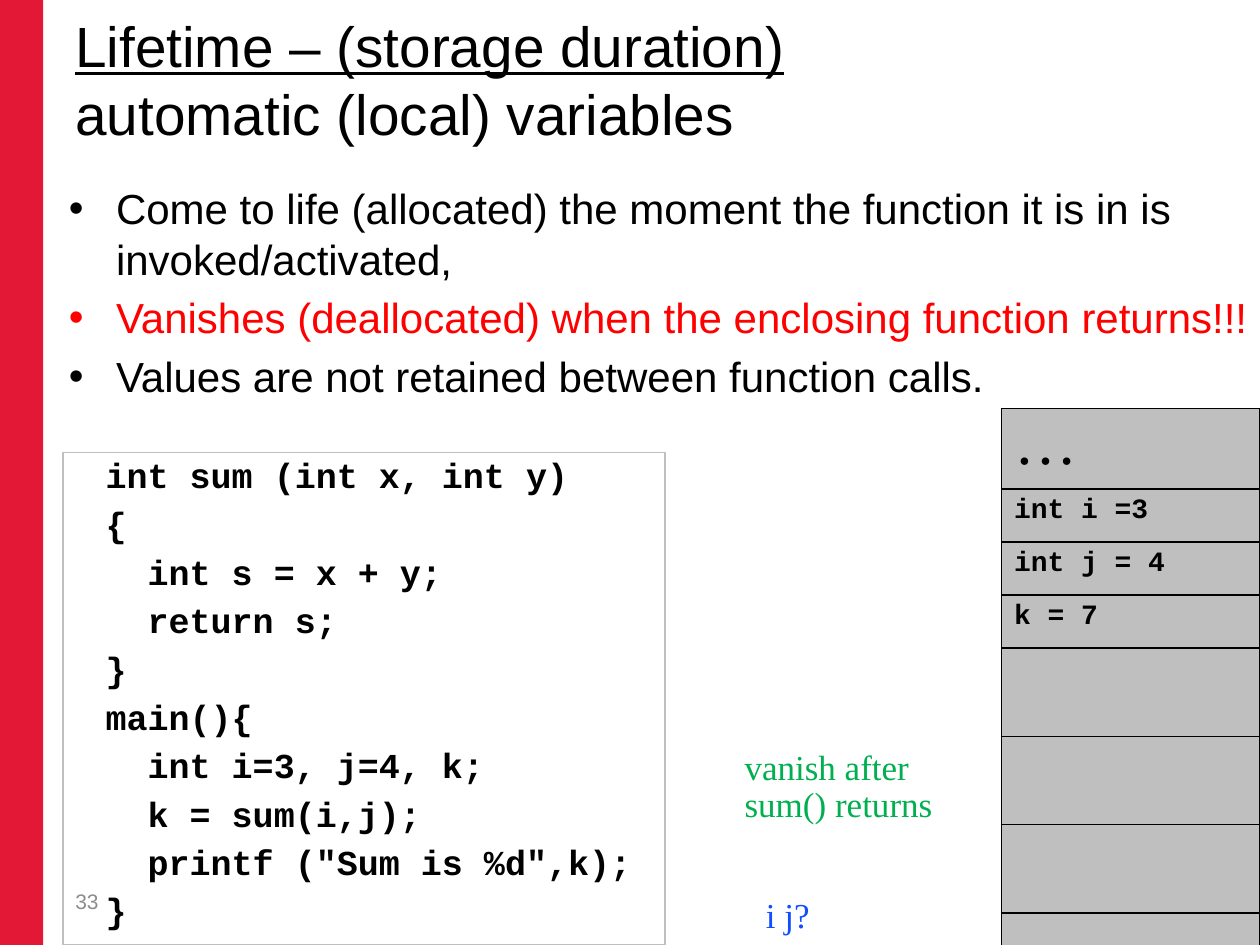
from lxml import etree
from pptx import Presentation
from pptx import util as u
from pptx.dml.color import RGBColor
from pptx.enum import shapes, text
from pptx.oxml.ns import qn

# Content
HUES = {"black": "000000", "red": "FF0000", "band": "E31837", "gray": "8C8C8C",
        "edge": "BFBFBF", "green": "00B050", "blue": "114FFB"}
SANS, MONO, SERIF = "Arial", "Courier New", "Times New Roman"

TITLE = [("Lifetime – (storage duration)", True),
         ("automatic (local) variables", False)]
POINTS = [
    ("Come to life (allocated) the moment the function it is in is invoked/activated,", "black"),
    ("Vanishes (deallocated) when the enclosing function returns!!!", "red"),
    ("Values are not retained between function calls.", "black"),
]
CODE = [
    "int sum (int x, int y)",
    "{",
    "  int s = x + y;",
    "  return s;",
    "}",
    "main(){",
    "  int i=3, j=4, k;",
    "  k = sum(i,j);",
    '  printf ("Sum is %d",k);',
    "}",
]
STACK = ["…", "int i =3", "int j = 4", "k = 7"] + [""] * 6
NOTES = [("vanish after sum() returns", "green", (14.76, 14.99, 5.28, 1.8)),
         ("i j?", "blue", (15.19, 17.98, 5.28, 1.02))]

show = Presentation()
show.slide_width, show.slide_height = u.Cm(25.4), u.Cm(19.05)
slide = show.slides.add_slide(show.slide_layouts[6])


def hue(name):
    return RGBColor.from_string(HUES[name])


def add_run(para, words, face, size, tint, bold=False, line=False):
    run = para.add_run()
    run.text = words
    font = run.font
    font.name, font.size, font.bold, font.underline = face, u.Pt(size), bold, line
    font.color.rgb = hue(tint)


def space(para, before, lines=None):
    """Line spacing as a factor, space before as a percentage."""
    if lines:
        para.line_spacing = lines
    gap = etree.SubElement(para._p.get_or_add_pPr(), qn("a:spcBef"))
    etree.SubElement(gap, qn("a:spcPct"), val=str(before * 1000))


def add_box(place, mid=False):
    frame = slide.shapes.add_textbox(*map(u.Cm, place)).text_frame
    frame.word_wrap = True
    frame.vertical_anchor = text.MSO_ANCHOR.MIDDLE if mid else text.MSO_ANCHOR.TOP
    return frame


def paras(frame, items):
    """Pair each item with a paragraph of the frame."""
    for n, item in enumerate(items):
        yield (frame.add_paragraph() if n else frame.paragraphs[0]), item


def add_rect(place, fill=None, edge=None):
    rect = slide.shapes.add_shape(shapes.MSO_SHAPE.RECTANGLE, *map(u.Cm, place))
    rect.shadow.inherit = False
    if fill:
        rect.fill.solid()
        rect.fill.fore_color.rgb = hue(fill)
    else:
        rect.fill.background()
    if edge:
        rect.line.color.rgb = hue(edge)
        rect.line.width = u.Pt(0.75)
    else:
        rect.line.fill.background()


# Side band and slide number
add_rect((0, 0, 0.87, 19.05), fill="band")
add_run(add_box((1.27, 17.63, 1.27, 1.07), mid=True).paragraphs[0], "33", SANS, 12, "gray")

# Code
for para, row in paras(add_box((1.88, 9.12, 12.7, 10.29)), CODE):
    space(para, 30, 0.9)
    add_run(para, row, MONO, 20, "black", bold=True)

# Memory stack
tall = [1.14] + [1.07] * (len(STACK) - 1)
table = slide.shapes.add_table(len(STACK), 1, u.Cm(20.19), u.Cm(8.23),
                               u.Cm(5.21), u.Cm(sum(tall))).table
table.first_row = table.horz_banding = False
for n, item in enumerate(STACK):
    table.rows[n].height = u.Cm(tall[n])
    cell = table.cell(n, 0)
    props = cell._tc.get_or_add_tcPr()
    for side in ("lnL", "lnR", "lnT", "lnB"):
        edge = etree.SubElement(props, qn("a:" + side), w=str(u.Pt(1)))
        paint = etree.SubElement(edge, qn("a:solidFill"))
        etree.SubElement(paint, qn("a:srgbClr"), val=HUES["black"])
    cell.fill.solid()
    cell.fill.fore_color.rgb = hue("edge")
    para = cell.text_frame.paragraphs[0]
    space(para, 30, 0.9)
    if item == "…":
        add_run(para, item, SERIF, 36, "black")
    elif item:
        add_run(para, item, MONO, 16, "black", bold=True)
    else:
        end = etree.SubElement(para._p, qn("a:endParaRPr"), sz="3600")
        etree.SubElement(end, qn("a:latin"), typeface=SERIF)

# Title
para = add_box((1.27, 0, 22.86, 3.18), mid=True).paragraphs[0]
for n, (words, line) in enumerate(TITLE):
    if n:
        para.add_line_break()
    add_run(para, words, SANS, 32.4, "black", line=line)
for stop in para._p.findall(qn("a:br")):
    etree.SubElement(stop, qn("a:rPr"), sz="3240")

# Bullets
for para, (words, tint) in paras(add_box((1.14, 3.56, 24.33, 12.19)), POINTS):
    space(para, 20)
    props = para._p.get_or_add_pPr()
    props.set("marL", str(u.Cm(0.95)))
    props.set("indent", str(-u.Cm(0.95)))
    etree.SubElement(props, qn("a:buFont"), typeface=SANS)
    etree.SubElement(props, qn("a:buChar"), char="•")
    add_run(para, words, SANS, 24, tint)

# Code frame
add_rect((1.27, 9.12, 12.14, 9.93), edge="edge")

# Side notes
for words, tint, place in NOTES:
    para = add_box(place).paragraphs[0]
    space(para, 30, 0.9)
    add_run(para, words, SERIF, 20, tint)

show.save("out.pptx")
